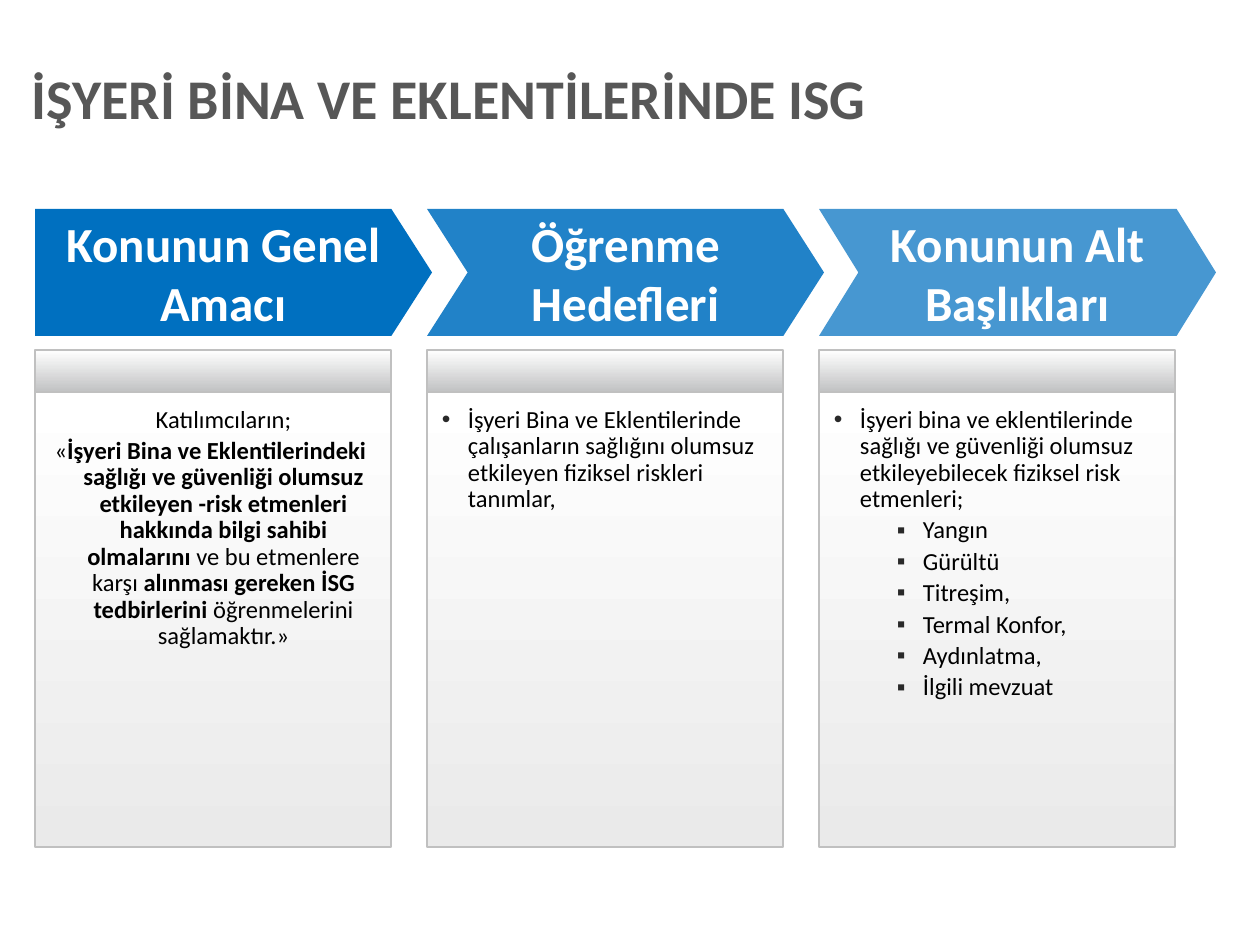
import pptx
import pptx.util
import pptx.dml.color
import pptx.enum.shapes
import pptx.enum.text
import pptx.oxml.ns
import lxml.etree

COLORS = {
    "title": "575757", "arrow": "0070C0", "white": "FFFFFF", "text": "000000",
    "bullet": "292929", "border": "C0C0C0", "band": "C1C2C3", "panel": "EAEAEA",
}
FONT = "Calibri"
TITLE = "İŞYERİ BİNA VE EKLENTİLERİNDE ISG"
COLUMNS = [
    {"heading": "Konunun Genel Amacı", "shape": "PENTAGON", "notch": 0.32, "opacity": 100,
     "body": [
         ("intro", [("Katılımcıların;", False)]),
         ("quote", [
             ("«", False),
             ("İşyeri Bina ve Eklentilerindeki sağlığı ve güvenliği olumsuz etkileyen "
              "-risk etmenleri hakkında bilgi sahibi olmalarını ", True),
             ("ve bu etmenlere karşı ", False),
             ("alınması gereken İSG tedbirlerini", True),
             (" öğrenmelerini sağlamaktır.»", False)]),
     ]},
    {"heading": "Öğrenme Hedefleri", "shape": "CHEVRON", "notch": 0.32, "opacity": 87,
     "body": [
         ("item", [("İşyeri Bina ve Eklentilerinde çalışanların sağlığını olumsuz "
                    "etkileyen fiziksel riskleri tanımlar,", False)]),
     ]},
    {"heading": "Konunun Alt Başlıkları", "shape": "CHEVRON", "notch": 0.31, "opacity": 72,
     "body": [
         ("item", [("İşyeri bina ve eklentilerinde sağlığı ve güvenliği olumsuz "
                    "etkileyebilecek fiziksel risk etmenleri;", False)]),
     ] + [("subitem", [(topic, False)]) for topic in (
         "Yangın", "Gürültü", "Titreşim,", "Termal Konfor,", "Aydınlatma,", "İlgili mevzuat")]},
]
STYLES = {
    "intro": {"align": "CENTER", "margin": 26, "indent": 0, "level": 0, "bullet": None},
    "quote": {"align": "CENTER", "margin": 26, "indent": -26, "level": 0, "bullet": None},
    "item": {"align": "LEFT", "margin": 26, "indent": -26, "level": 0, "bullet": "•"},
    "subitem": {"align": "LEFT", "margin": 89, "indent": -26, "level": 1, "bullet": "▪"},
}
LEFT, PITCH = 35, 392
ARROW_TOP, ARROW_WIDTH, ARROW_HEIGHT = 209, 397, 127
PANEL_WIDTH, BAND_TOP, BAND_HEIGHT, BODY_HEIGHT = 356, 350, 42, 455


def px(value):
    return pptx.util.Emu(round(value * 914400 / 126))


def rgb(name):
    return pptx.dml.color.RGBColor.from_string(COLORS[name])


def add_xml(parent, tag, **attributes):
    return lxml.etree.SubElement(parent, pptx.oxml.ns.qn(tag), **attributes)


def set_font(paragraph, size, color, bold=None):
    font = paragraph.font
    font.name, font.size, font.bold = FONT, pptx.util.Pt(size), bold
    font.color.rgb = rgb(color)


def set_frame(frame, anchor, insets):
    frame.word_wrap = True
    frame.vertical_anchor = anchor
    frame.margin_left, frame.margin_top, frame.margin_right, frame.margin_bottom = map(px, insets)


def add_shape(slide, kind, left, top, width, height):
    shape = slide.shapes.add_shape(kind, px(left), px(top), px(width), px(height))
    shape.shadow.inherit = False
    return shape


def add_arrow(slide, column, left):
    kind = getattr(pptx.enum.shapes.MSO_SHAPE, column["shape"])
    shape = add_shape(slide, kind, left, ARROW_TOP, ARROW_WIDTH, ARROW_HEIGHT)
    shape.adjustments[0] = column["notch"]
    shape.fill.solid()
    shape.fill.fore_color.rgb = rgb("arrow")
    shape.line.fill.background()
    if column["opacity"] < 100:
        fill_color = shape.element.spPr.find(".//" + pptx.oxml.ns.qn("a:srgbClr"))
        add_xml(fill_color, "a:alpha", val=str(column["opacity"] * 1000))
    set_frame(shape.text_frame, pptx.enum.text.MSO_ANCHOR.MIDDLE, (13, 6, 13, 6))
    paragraph = shape.text_frame.paragraphs[0]
    paragraph.text = column["heading"]
    paragraph.alignment = pptx.enum.text.PP_ALIGN.CENTER
    set_font(paragraph, 28, "white", True)


def add_panel(slide, left, top, height, end_color):
    shape = add_shape(slide, pptx.enum.shapes.MSO_SHAPE.RECTANGLE, left, top, PANEL_WIDTH, height)
    shape.fill.gradient()
    shape.fill.gradient_angle = 270
    for stop, color, position in zip(shape.fill.gradient_stops, ("white", end_color), (0, 1)):
        stop.color.rgb = rgb(color)
        stop.position = position
    shape.line.color.rgb = rgb("border")
    shape.line.width = pptx.util.Pt(1)
    return shape


def fill_body(frame, body):
    set_frame(frame, pptx.enum.text.MSO_ANCHOR.TOP, (15, 15, 20, 10))
    for index, (style_name, runs) in enumerate(body):
        style = STYLES[style_name]
        paragraph = frame.add_paragraph() if index else frame.paragraphs[0]
        paragraph.level = style["level"]
        paragraph.alignment = getattr(pptx.enum.text.PP_ALIGN, style["align"])
        paragraph.line_spacing = 0.9
        paragraph.space_after = pptx.util.Pt(2.8)
        properties = paragraph._p.get_or_add_pPr()
        properties.set("marL", str(px(style["margin"])))
        properties.set("indent", str(px(style["indent"])))
        if style["bullet"]:
            bullet_color = add_xml(properties, "a:buClr")
            add_xml(bullet_color, "a:srgbClr", val=COLORS["bullet"])
            add_xml(properties, "a:buFont", typeface="Arial")
            add_xml(properties, "a:buChar", char=style["bullet"])
        set_font(paragraph, 14, "text")
        for text, bold in runs:
            run = paragraph.add_run()
            run.text = text
            run.font.bold = bold


def add_title(slide):
    title = slide.shapes.title
    title.left, title.top, title.width, title.height = map(px, (32, 57, 1215, 89))
    set_frame(title.text_frame, pptx.enum.text.MSO_ANCHOR.MIDDLE, (0, 6, 0, 6))
    paragraph = title.text_frame.paragraphs[0]
    paragraph.text = TITLE
    paragraph.alignment = pptx.enum.text.PP_ALIGN.LEFT
    paragraph.line_spacing = 0.9
    set_font(paragraph, 32, "title", True)


def main():
    presentation = pptx.Presentation()
    presentation.slide_width, presentation.slide_height = px(1260), px(945)
    slide = presentation.slides.add_slide(presentation.slide_layouts[5])
    add_title(slide)
    for index, column in enumerate(COLUMNS):
        left = LEFT + index * PITCH
        add_arrow(slide, column, left)
        add_panel(slide, left, BAND_TOP, BAND_HEIGHT, "band")
        panel = add_panel(slide, left, BAND_TOP + BAND_HEIGHT, BODY_HEIGHT, "panel")
        fill_body(panel.text_frame, column["body"])
    presentation.save("out.pptx")


if __name__ == "__main__":
    main()
